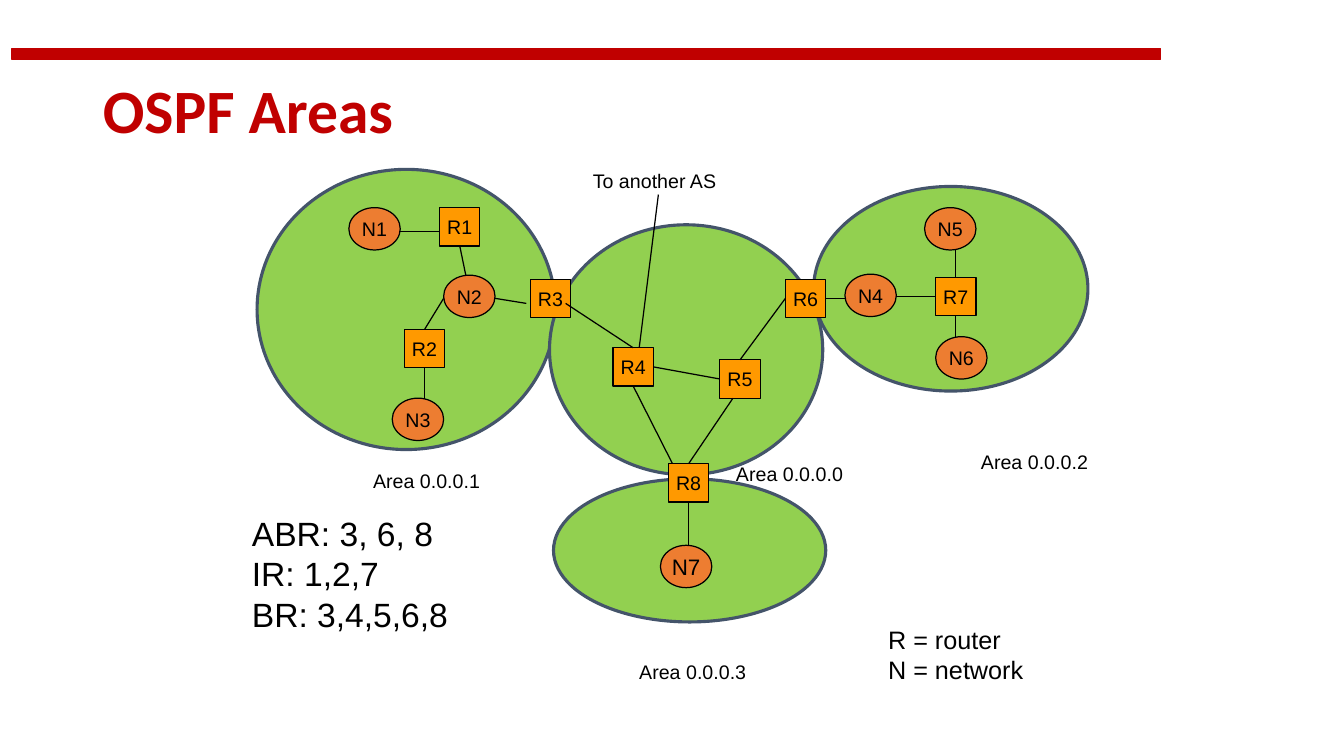
import pptx
import pptx.dml.color
import pptx.enum.shapes
import pptx.enum.text
import pptx.oxml.ns
import pptx.util
from lxml import etree

Inches, Pt = pptx.util.Inches, pptx.util.Pt
SHAPES = pptx.enum.shapes.MSO_SHAPE
ANCHOR = pptx.enum.text.MSO_ANCHOR
ALIGN = pptx.enum.text.PP_ALIGN

# Content: areas, routers and networks
TITLE = "OSPF Areas"
AREAS = [  # left, top, width, height
    (2.55, 1.68, 2.96, 2.78),
    (8.07, 1.85, 2.72, 2.03),
    (5.45, 2.23, 2.71, 2.48),
    (5.49, 4.75, 2.7, 1.42),
]
ROUTERS = {  # left, top
    "R1": (4.36, 2.06), "R2": (4.01, 3.27), "R3": (5.26, 2.77), "R4": (6.08, 3.45),
    "R5": (7.14, 3.57), "R6": (7.79, 2.77), "R7": (9.28, 2.75), "R8": (6.63, 4.6),
}
NETWORKS = {
    "N1": (3.46, 2.06), "N2": (4.4, 2.73), "N3": (3.89, 3.95), "N4": (8.38, 2.72),
    "N5": (9.17, 2.06), "N6": (9.28, 3.34), "N7": (6.55, 5.41),
}
ROUTER_SIZE = (0.4, 0.38)
NETWORK_SIZE = (0.51, 0.42)

# Each end of a link is a router side or a point in inches
TOP, LEFT, BOTTOM, RIGHT = range(4)
LINKS = [
    ((3.97, 2.3), (4.36, 2.3)),
    (("R1", BOTTOM), (4.62, 2.73)),
    (("R2", TOP), (4.4, 2.96)),
    (("R2", BOTTOM), (4.21, 3.96)),
    ((4.91, 2.96), (5.22, 3.01)),
    ((5.61, 3.01), ("R4", TOP)),
    ((6.34, 3.45), (6.53, 1.93)),
    (("R4", RIGHT), ("R5", LEFT)),
    (("R4", BOTTOM), (6.67, 4.6)),
    ((7.27, 3.95), ("R8", TOP)),
    (("R6", LEFT), ("R5", TOP)),
    (("R6", RIGHT), (8.38, 2.96)),
    ((8.89, 2.94), ("R7", LEFT)),
    (("R7", TOP), (9.48, 2.48)),
    (("R7", BOTTOM), (9.48, 3.35)),
    (("R8", BOTTOM), (6.83, 5.42)),
]
CAPTIONS = [  # text, left, top, width
    ("Area 0.0.0.1", 3.7, 4.65, 1.07),
    ("Area 0.0.0.2", 9.73, 4.46, 1.07),
    ("Area 0.0.0.3", 6.34, 6.55, 1.07),
    ("Area 0.0.0.0", 7.3, 4.58, 1.07),
    ("To another AS", 5.88, 1.68, 1.23),
]
ROLES = ["ABR: 3, 6, 8", "IR: 1,2,7", "BR: 3,4,5,6,8"]
LEGEND = ["R = router", "N = network"]


def color(value):
    return pptx.dml.color.RGBColor.from_string(value)


def set_attributes(target, values):
    for name, value in values.items():
        setattr(target, name, value)


def write(shape, lines, size, frame_format, font="Arial", ink="000000", bold=False,
          align=ALIGN.LEFT, spacing=1.0):
    frame = shape.text_frame
    set_attributes(frame, frame_format)
    frame.text = "\n".join(lines)
    for paragraph in frame.paragraphs:
        set_attributes(paragraph, {"alignment": align, "line_spacing": spacing})
        set_attributes(paragraph.font, {"name": font, "size": Pt(size), "bold": bold})
        paragraph.font.color.rgb = color(ink)


def add_shape(slide, kind, box, fill, line, line_width):
    shape = slide.shapes.add_shape(kind, *map(Inches, box))
    shape.shadow.inherit = False
    shape.fill.solid()
    shape.fill.fore_color.rgb = color(fill)
    shape.line.color.rgb = color(line)
    shape.line.width = Pt(line_width)
    return shape


def add_text(slide, lines, box, size, frame_format):
    write(slide.shapes.add_textbox(*map(Inches, box)), lines, size, frame_format)


def add_link(slide, begin, end, nodes):
    points = [(0, 0) if isinstance(stop[0], str) else stop for stop in (begin, end)]
    link = slide.shapes.add_connector(pptx.enum.shapes.MSO_CONNECTOR.STRAIGHT,
                                      *(Inches(value) for point in points for value in point))
    for stop, connect in ((begin, link.begin_connect), (end, link.end_connect)):
        if isinstance(stop[0], str):
            connect(nodes[stop[0]], stop[1])
    link.line.color.rgb = color("000000")
    link.line.width = Pt(0.88)
    properties = link._element.find(pptx.oxml.ns.qn("p:spPr"))
    etree.SubElement(properties, pptx.oxml.ns.qn("a:effectLst"))


NO_MARGINS = {"margin_left": 0, "margin_top": 0, "margin_right": 0, "margin_bottom": 0,
              "word_wrap": False}
NODE_FRAME = {**NO_MARGINS, "vertical_anchor": ANCHOR.MIDDLE}


def main():
    presentation = pptx.Presentation()
    set_attributes(presentation, {"slide_width": Inches(13.33), "slide_height": Inches(7.5)})
    slide = presentation.slides.add_slide(presentation.slide_layouts[5])

    # Red bar and title
    add_shape(slide, SHAPES.RECTANGLE, (0.12, 0.48, 11.39, 0.11), "C00000", "C00000", 1)
    title = slide.shapes.title
    set_attributes(title, {"left": Inches(0.92), "top": Inches(0.4),
                           "width": Inches(11.5), "height": Inches(1.45)})
    write(title, [TITLE], 44, {"vertical_anchor": ANCHOR.MIDDLE, "word_wrap": True},
          "Calibri", "C00000", True, spacing=0.9)

    # Areas
    for box in AREAS:
        add_shape(slide, SHAPES.OVAL, box, "92D050", "44546A", 2.25)

    # Routers and networks
    nodes = {}
    for group, size, kind, fill in ((ROUTERS, ROUTER_SIZE, SHAPES.RECTANGLE, "FF9900"),
                                    (NETWORKS, NETWORK_SIZE, SHAPES.OVAL, "ED7D31")):
        for name, corner in group.items():
            nodes[name] = add_shape(slide, kind, corner + size, fill, "000000", 0.88)
            write(nodes[name], [name], 16 if name == "N7" else 14, NODE_FRAME,
                  align=ALIGN.CENTER)

    # Links
    for begin, end in LINKS:
        add_link(slide, begin, end, nodes)

    # Captions, router roles and legend
    for text, left, top, width in CAPTIONS:
        add_text(slide, [text], (left, top, width, 0.24), 14, NO_MARGINS)
    add_text(slide, ROLES, (2.4, 5.04, 2.17, 1.31), 24, {"word_wrap": False})
    add_text(slide, LEGEND, (8.71, 6.14, 1.59, 0.7), 18,
             {"word_wrap": True, "vertical_anchor": ANCHOR.MIDDLE})

    presentation.save("out.pptx")


if __name__ == "__main__":
    main()
